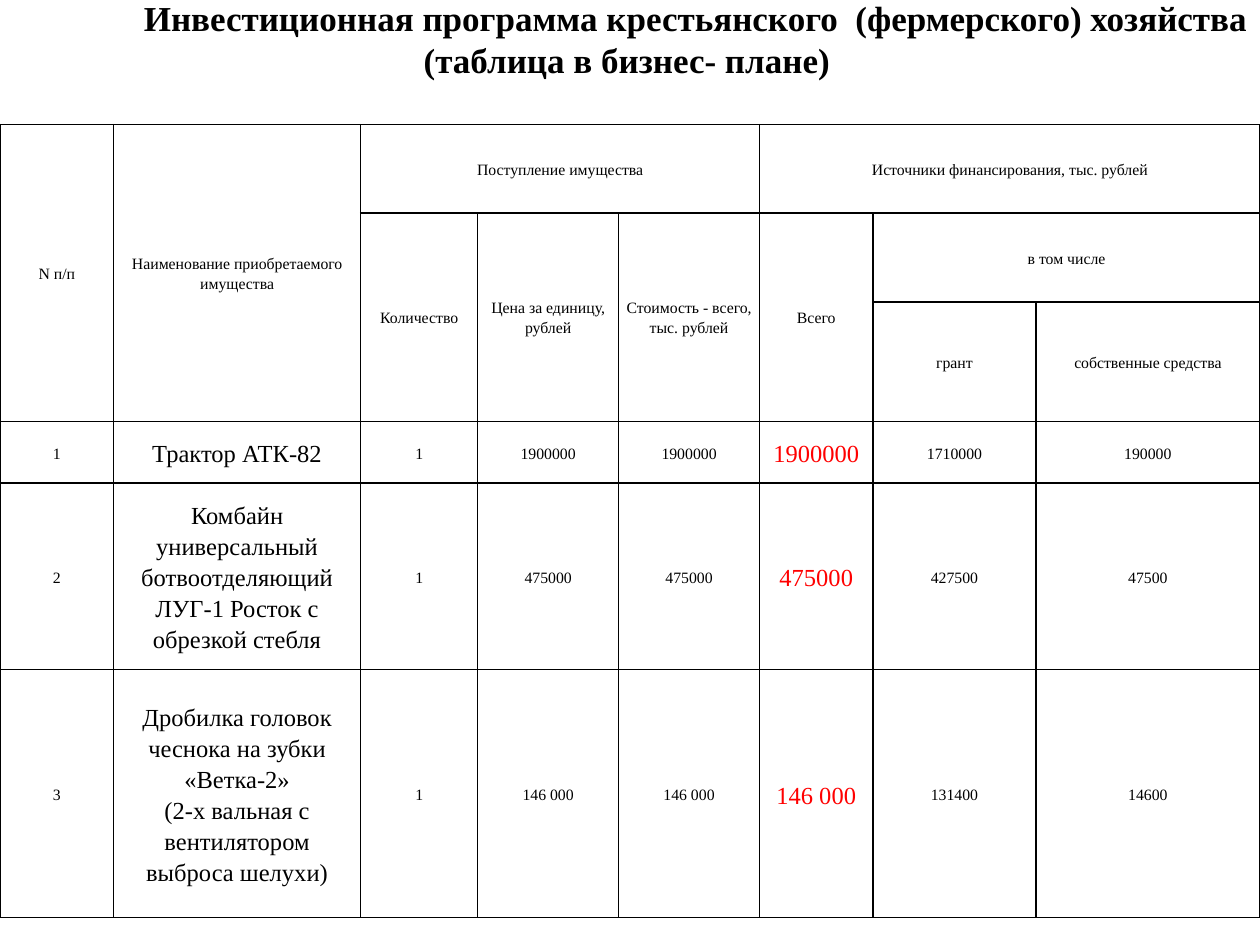
from lxml import etree
from pptx import Presentation
from pptx.dml.color import RGBColor
from pptx.enum import text as t
from pptx.oxml import ns
from pptx.util import Cm, Pt

BLACK = RGBColor(0, 0, 0)
RED = RGBColor(255, 0, 0)
FACE = "Times New Roman"

TITLE = [
    ("Инвестиционная программа крестьянского  (фермерского) хозяйства", 2.65),
    ("(таблица в бизнес- плане)", 8.29),
]
COLS = [2.29, 4.98, 2.36, 2.84, 2.84, 2.29, 3.28, 4.52]
ROWS = [1.78, 1.8, 2.41, 1.24, 3.76, 5]

# row, column, rows spanned, columns spanned, wording
HEADS = [
    (0, 0, 3, 1, "N п/п"),
    (0, 1, 3, 1, "Наименование приобретаемого имущества"),
    (0, 2, 1, 3, "Поступление имущества"),
    (0, 5, 1, 3, "Источники финансирования, тыс. рублей"),
    (1, 2, 2, 1, "Количество"),
    (1, 3, 2, 1, "Цена за единицу, рублей"),
    (1, 4, 2, 1, "Стоимость - всего, тыс. рублей"),
    (1, 5, 2, 1, "Всего"),
    (1, 6, 1, 2, "в том числе"),
    (2, 6, 1, 1, "грант"),
    (2, 7, 1, 1, "собственные средства"),
]
ITEMS = [
    ("1", "Трактор АТК-82", "1", "1900000", "1900000", "1900000",
     "1710000", "190000"),
    ("2", "Комбайн универсальный ботвоотделяющий ЛУГ-1 Росток с обрезкой "
     "стебля", "1", "475000", "475000", "475000", "427500", "47500"),
    ("3", "Дробилка головок чеснока на зубки «Ветка-2»\n"
     "(2-х вальная с вентилятором выброса шелухи)", "1", "146 000",
     "146 000", "146 000", "131400", "14600"),
]
NAME, TOTAL = 1, 5


def style(par, size, color=BLACK, bold=False):
    for key, val in dict(name=FACE, size=Pt(size), bold=bold).items():
        setattr(par.font, key, val)
    par.font.color.rgb = color


def border(cell):
    props = cell._tc.get_or_add_tcPr()
    for side in ("a:lnL", "a:lnR", "a:lnT", "a:lnB"):
        line = etree.SubElement(props, ns.qn(side), w=str(Pt(1)))
        fill = etree.SubElement(line, ns.qn("a:solidFill"))
        etree.SubElement(fill, ns.qn("a:srgbClr"), val=str(BLACK))


deck = Presentation()
deck.slide_width, deck.slide_height = Cm(25.4), Cm(19.05)
slide = deck.slides.add_slide(deck.slide_layouts[6])

# Investment table
grid = slide.shapes.add_table(
    len(ROWS), len(COLS), Cm(0), Cm(2.51), Cm(sum(COLS)), Cm(sum(ROWS))).table
grid.first_row = grid.horz_banding = False
for col, width in zip(grid.columns, COLS):
    col.width = Cm(width)
for row, height in zip(grid.rows, ROWS):
    row.height = Cm(height)

for row, col, down, across, words in HEADS:
    cell = grid.cell(row, col)
    cell.text = words
    if down * across > 1:
        cell.merge(grid.cell(row + down - 1, col + across - 1))
for row, item in enumerate(ITEMS, 3):
    for col, words in enumerate(item):
        grid.cell(row, col).text = words

form = dict(margin_left=Cm(0.15), margin_right=Cm(0.15), margin_top=0,
            margin_bottom=0, vertical_anchor=t.MSO_ANCHOR.MIDDLE)
for row in range(len(ROWS)):
    for col in range(len(COLS)):
        cell = grid.cell(row, col)
        border(cell)
        cell.fill.background()
        for key, val in form.items():
            setattr(cell, key, val)
        large = row > 2 and col in (NAME, TOTAL)
        for par in cell.text_frame.paragraphs:
            par.alignment = t.PP_ALIGN.CENTER
            par.line_spacing = 1.15
            style(par, 14 if large else 9,
                  RED if large and col == TOTAL else BLACK)

# Title
frame = slide.shapes.add_textbox(
    Cm(0), Cm(-0.25), Cm(25.6), Cm(2.49)).text_frame
frame.word_wrap = True
frame.margin_top = Cm(0.18)
for num, (words, indent) in enumerate(TITLE):
    par = frame.add_paragraph() if num else frame.paragraphs[0]
    par.text = words
    par._p.get_or_add_pPr().set("indent", str(Cm(indent)))
    style(par, 20, bold=True)

deck.save("out.pptx")
